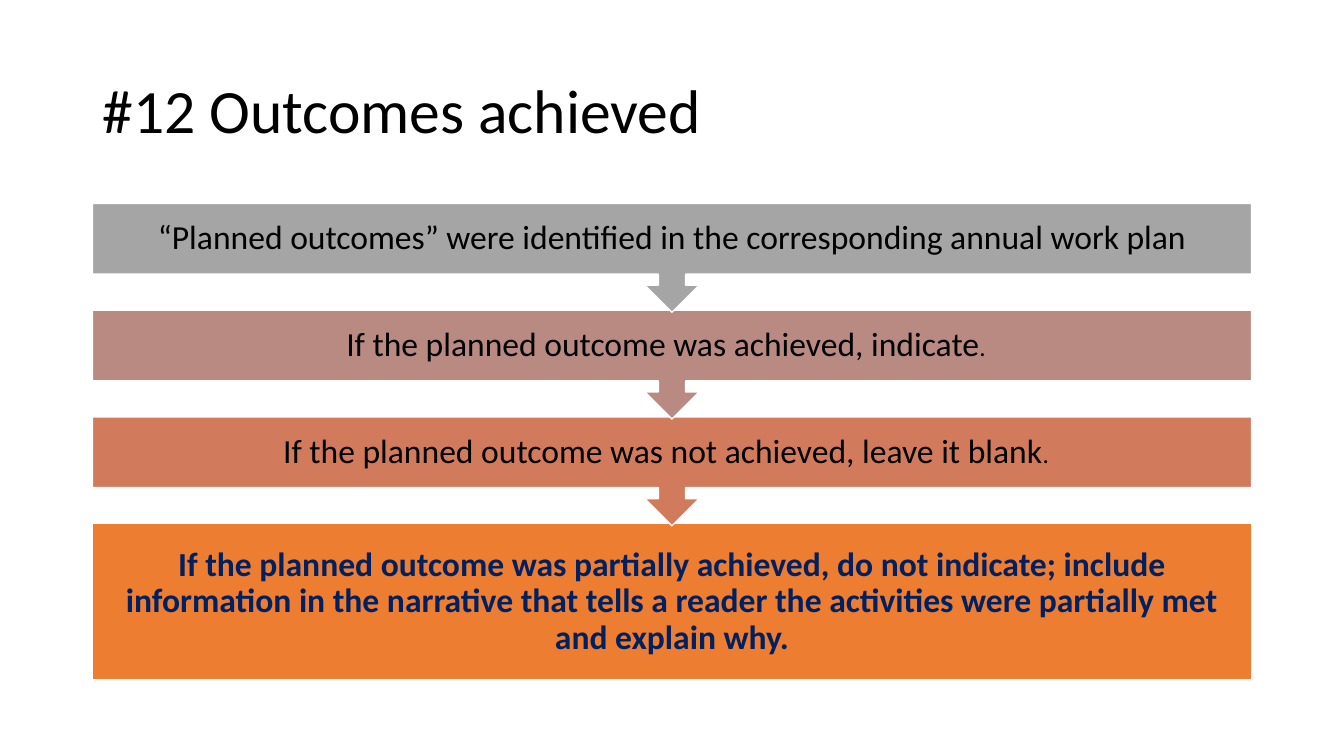
import pptx
import pptx.dml.color
import pptx.enum.shapes
import pptx.enum.text
from pptx.util import Cm

COLORS = {
    "black": "000000",
    "white": "FFFFFF",
    "navy": "002060",
    "gray": "A5A5A5",
    "rose": "B98A82",
    "terracotta": "D17B5C",
    "orange": "ED7D31",
}
LEFT, WIDTH = Cm(2.33), Cm(29.21)
FIRST_TOP, STEP = 5.13, 2.69
INSET = 0.48


def color(name):
    return pptx.dml.color.RGBColor.from_string(COLORS[name])


def add_run(paragraph, text, size, color_name, bold=False):
    run = paragraph.add_run()
    run.text = text
    run.font.name = "Calibri"
    run.font.size = pptx.util.Pt(size)
    run.font.bold = bold
    run.font.color.rgb = color(color_name)


presentation = pptx.Presentation()
presentation.slide_width = Cm(33.87)
presentation.slide_height = Cm(19.05)
slide = presentation.slides.add_slide(presentation.slide_layouts[5])

title = slide.shapes.title
title.left, title.top, title.width, title.height = LEFT, Cm(1.01), WIDTH, Cm(3.68)
title.text_frame.vertical_anchor = pptx.enum.text.MSO_ANCHOR.MIDDLE
title_paragraph = title.text_frame.paragraphs[0]
title_paragraph.alignment = pptx.enum.text.PP_ALIGN.LEFT
title_paragraph.line_spacing = 0.9
add_run(title_paragraph, "#12 Outcomes achieved", 44, "black")

callout = pptx.enum.shapes.MSO_SHAPE.DOWN_ARROW_CALLOUT
rectangle = pptx.enum.shapes.MSO_SHAPE.RECTANGLE

# Each step: shape, height, fill, text colour, extra right inset, runs with sizes
steps = [
    (callout, 2.74, "gray", "black", 0,
     [("“Planned outcomes” were identified in the corresponding annual work plan", 24)]),
    (callout, 2.74, "rose", "black", 0.3,
     [("If the planned outcome was achieved, indicate", 24), (".", 18)]),
    (callout, 2.74, "terracotta", "black", 0.3,
     [("If the planned outcome was not achieved, leave it blank", 24), (".", 18)]),
    (rectangle, 3.94, "orange", "navy", 0,
     [("If the planned outcome was partially achieved, do not indicate; include "
       "information in the narrative that tells a reader the activities were "
       "partially met and explain why.", 24)]),
]

# The last step is drawn first, so each arrow tip lies over the step below it
for index, step in reversed(list(enumerate(steps))):
    kind, height, fill, text_color, extra_inset, runs = step
    shape = slide.shapes.add_shape(
        kind, LEFT, Cm(FIRST_TOP + index * STEP), WIDTH, Cm(height))
    shape.shadow.inherit = False
    shape.fill.solid()
    shape.fill.fore_color.rgb = color(fill)
    shape.line.color.rgb = color("white")
    shape.line.width = pptx.util.Pt(1)

    frame = shape.text_frame
    frame.word_wrap = True
    frame.vertical_anchor = pptx.enum.text.MSO_ANCHOR.MIDDLE
    frame.margin_left = frame.margin_top = frame.margin_bottom = Cm(INSET)
    frame.margin_right = Cm(INSET + extra_inset)
    paragraph = frame.paragraphs[0]
    paragraph.alignment = pptx.enum.text.PP_ALIGN.CENTER
    paragraph.line_spacing = 0.9
    for text, size in runs:
        add_run(paragraph, text, size, text_color, bold=kind == rectangle)

presentation.save("out.pptx")
